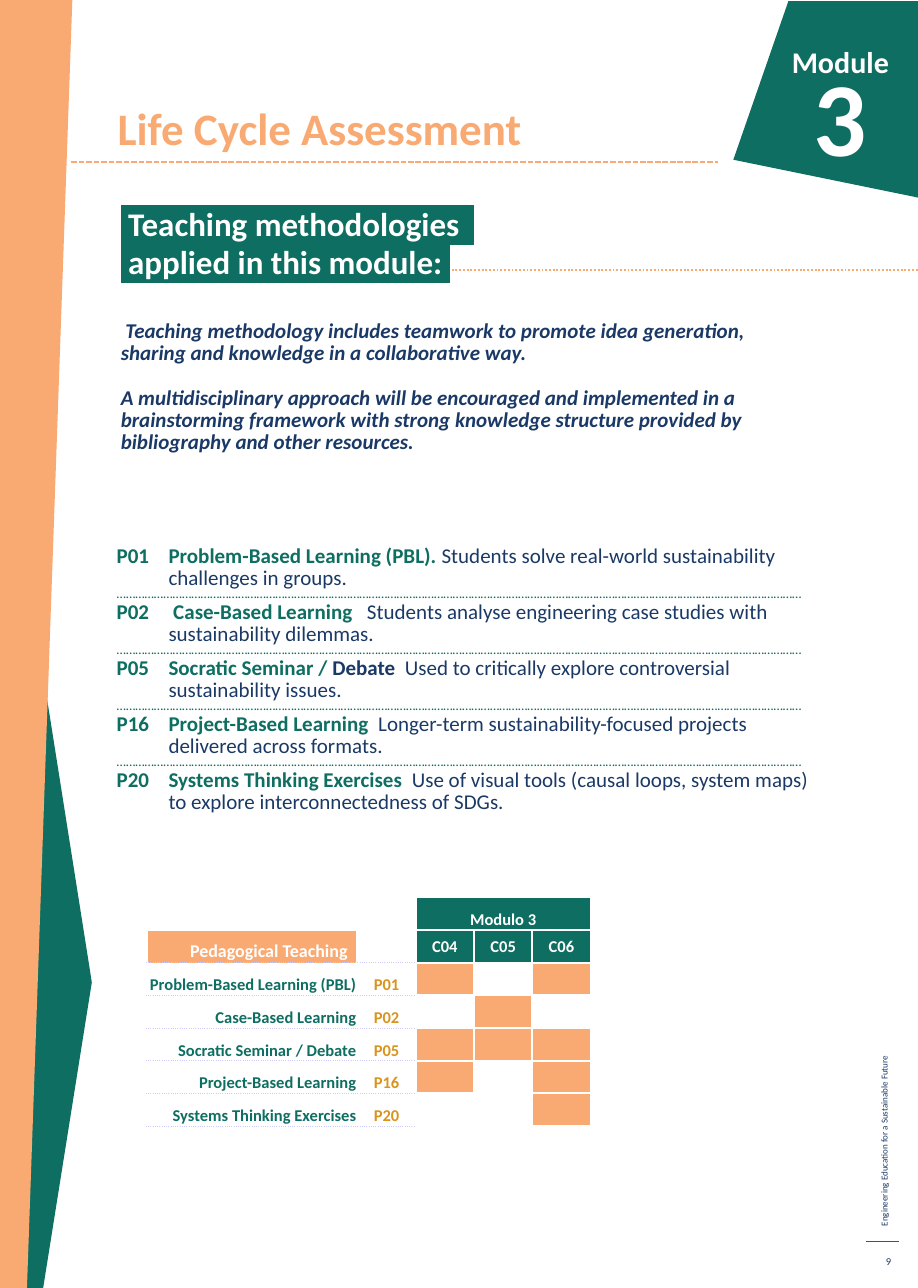
"""Build the Life Cycle Assessment teaching methodologies page."""
from dataclasses import dataclass
from typing import Optional

from lxml.etree import SubElement
from pptx import Presentation
from pptx.dml.color import RGBColor
from pptx.enum.dml import MSO_LINE
from pptx.enum.text import MSO_ANCHOR, MSO_AUTO_SIZE, PP_ALIGN
from pptx.oxml.ns import qn
from pptx.util import Inches, Pt

GREEN = RGBColor(0x0E, 0x6E, 0x61)
ORANGE = RGBColor(0xF9, 0xAA, 0x73)
NAVY = RGBColor(0x1A, 0x39, 0x66)
GOLD = RGBColor(0xD9, 0x94, 0x1E)
LILAC = RGBColor(0xCC, 0xCC, 0xFF)
WHITE = RGBColor(0xFF, 0xFF, 0xFF)
FONT = "Calibri"
DOTS = "……………………………………………………………………………………………………………………….…………………………………………………………………………"
DOTS_WIDTH = 456
DOTS_SIZE = 9


@dataclass(frozen=True)
class Span:
    text: str
    size: float
    color: RGBColor
    bold: bool = False
    italic: bool = False
    highlight: Optional[RGBColor] = None
    spacing: float = 0


@dataclass(frozen=True)
class Box:
    left: float
    top: float
    width: float
    height: float


@dataclass(frozen=True)
class Method:
    code: str
    lead: str
    detail: str
    label: str
    marks: str
    navy_lead: str = ""


@dataclass(frozen=True)
class Rule:
    x1: float
    x2: float
    y: float
    color: RGBColor
    width: float
    dash: Optional[MSO_LINE] = None


METHODS = [
    Method("P01\t", "Problem-Based Learning (PBL). ",
           "Students solve real-world sustainability challenges in groups.",
           "Problem-Based Learning (PBL)", "X.X"),
    Method("P02\t", " Case-Based Learning   ",
           "Students analyse engineering case studies with sustainability dilemmas.",
           "Case-Based Learning", ".X."),
    Method("P05 \t", "Socratic Seminar / ",
           "Used to critically explore controversial sustainability issues.",
           "Socratic Seminar / Debate", "XXX", "Debate  "),
    Method("P16 \t", "Project-Based Learning  ",
           "Longer-term sustainability-focused projects delivered across formats.",
           "Project-Based Learning", "X.X"),
    Method("P20\t", "Systems Thinking Exercises  ",
           "Use of visual tools (causal loops, system maps) to explore interconnectedness of SDGs.",
           "Systems Thinking Exercises", "..X"),
]
RULES = [
    Rule(8.02, 8.32, 11.5, GREEN, 0.75),
    Rule(2.52, 8.5, 2.5, ORANGE, 1.25, MSO_LINE.ROUND_DOT),
    Rule(0.66, 6.65, 1.5, ORANGE, 1.25, MSO_LINE.SQUARE_DOT),
]
OUTLINES = [
    (GREEN, [(0.4, 11.93), (0.23, 11.93), (0.23, 5.17), (0.83, 8.97), (0.85, 9.1)]),
    (ORANGE, [(0, 0), (0.67, 0), (0.25, 11.93), (0, 11.93)]),
    (GREEN, [(8.5, 0.01), (7.3, 0.01), (6.79, 1.48), (8.5, 1.83)]),
]


def add_span(p, span: Span) -> None:
    r = p.add_run()
    r.text = span.text
    f = r.font
    f.name, f.size, f.bold, f.italic = FONT, Pt(span.size), span.bold, span.italic
    f.color.rgb = span.color
    rPr = r._r.get_or_add_rPr()
    if span.spacing:
        rPr.set("spc", str(round(span.spacing * 100)))
    if span.highlight is not None:
        mark = SubElement(rPr, qn("a:highlight"))
        SubElement(mark, qn("a:srgbClr")).set("val", str(span.highlight))
        rPr.find(qn("a:solidFill")).addnext(mark)


def fill_text(tf, lines: list[list[Span]], align=PP_ALIGN.LEFT, leading=None, gap=0) -> None:
    for i, spans in enumerate(lines):
        p = tf.paragraphs[0] if i == 0 else tf.add_paragraph()
        p.alignment, p.space_before, p.space_after = align, Pt(0), Pt(gap)
        if leading:
            p.line_spacing = Pt(leading)
        for span in spans:
            add_span(p, span)


def place(sp, box: Box, anchor=MSO_ANCHOR.TOP):
    sp.left, sp.top = Inches(box.left), Inches(box.top)
    sp.width, sp.height = Inches(box.width), Inches(box.height)
    tf = sp.text_frame
    tf.word_wrap, tf.auto_size, tf.vertical_anchor = True, MSO_AUTO_SIZE.NONE, anchor
    return tf


def add_text(s, box: Box, lines: list[list[Span]], rotation=0, anchor=MSO_ANCHOR.TOP, **layout) -> None:
    sp = s.shapes.add_textbox(0, 0, 0, 0)
    fill_text(place(sp, box, anchor), lines, **layout)
    sp.rotation = rotation


def add_outline(s, color: RGBColor, points: list[tuple[float, float]]) -> None:
    pts = [(Inches(x), Inches(y)) for x, y in points]
    builder = s.shapes.build_freeform(*pts[0])
    builder.add_line_segments(pts[1:], close=True)
    sp = builder.convert_to_shape()
    sp.shadow.inherit = False
    sp.fill.solid()
    sp.fill.fore_color.rgb = color
    sp.line.fill.background()


def add_rule(s, rule: Rule) -> None:
    y = Inches(rule.y)
    c = s.shapes.add_connector(1, Inches(rule.x1), y, Inches(rule.x2), y)
    c.line.color.rgb, c.line.width = rule.color, Pt(rule.width)
    if rule.dash:
        c.line.dash_style = rule.dash
    SubElement(c._element.spPr, qn("a:effectLst"))


def fill_list(tf) -> None:
    natural = DOTS_SIZE * (0.69 * DOTS.count("…") + 0.25)
    dots = Span(DOTS, DOTS_SIZE, GREEN, spacing=(DOTS_WIDTH - natural) / len(DOTS))
    lines = []
    for m in METHODS:
        if lines:
            lines.append([dots])
        lead = [Span(m.code + m.lead, 14, GREEN, True)]
        if m.navy_lead:
            lead.append(Span(m.navy_lead, 14, NAVY, True))
        lines.append(lead + [Span(m.detail, 14, NAVY)])
    fill_text(tf, lines)
    for i, p in enumerate(tf.paragraphs):
        p.line_spacing = Pt(7.8 if i % 2 else 14.8)
        pPr = p._p.get_or_add_pPr()
        pPr.set("marL", str(Inches(0.49)))
        pPr.set("indent", str(-Inches(0.48)))
        SubElement(pPr, qn("a:buNone"))


def format_cell(cell, span: Optional[Span], fill: Optional[RGBColor], align, anchor, dotted: str) -> None:
    cell.margin_left = cell.margin_right = cell.margin_top = Inches(0.01)
    cell.margin_bottom = 0
    cell.vertical_anchor = anchor
    if span:
        fill_text(cell.text_frame, [[span]], align)
    else:
        SubElement(cell.text_frame.paragraphs[0]._p, qn("a:endParaRPr")).set("sz", "1100")
    tcPr = cell._tc.get_or_add_tcPr()
    for side in "LRTB":
        dots = side in dotted
        ln = SubElement(tcPr, qn(f"a:ln{side}"))
        ln.set("w", str(Pt(0.5 if dots else 1.5)))
        color = SubElement(SubElement(ln, qn("a:solidFill")), qn("a:srgbClr"))
        color.set("val", str(LILAC if dots else WHITE))
        SubElement(ln, qn("a:prstDash")).set("val", "sysDot" if dots else "solid")
    if fill is None:
        cell.fill.background()
    else:
        cell.fill.solid()
        cell.fill.fore_color.rgb = fill


def add_matrix(s) -> None:
    def bold(text: str, color: RGBColor = WHITE, size: float = 11) -> Span:
        return Span(text, size, color, True)

    rows = [[(None, None), (None, None), (bold("Modulo 3"), GREEN), (None, GREEN), (None, GREEN)],
            [(bold("Pedagogical Teaching", size=12), ORANGE), (None, None)]
            + [(bold(c), GREEN) for c in ("C04", "C05", "C06")]]
    for m in METHODS:
        rows.append([(bold(m.label, GREEN), None), (bold(m.code.strip(), GOLD), None)]
                    + [(None, ORANGE if mark == "X" else None) for mark in m.marks])
    t = s.shapes.add_table(len(rows), 5, Inches(1.36), Inches(8.31), Inches(4.11), Inches(2.12)).table
    t.first_row = t.horz_banding = False
    for i, col in enumerate(t.columns):
        col.width = Inches(0.54 if i else 1.95)
    for i, row in enumerate(rows):
        for j, (span, fill) in enumerate(row):
            dotted = "" if j > 1 or i == 0 else "B" if i == 1 else "TB"
            anchor = MSO_ANCHOR.MIDDLE if i == 1 and j > 1 else MSO_ANCHOR.BOTTOM
            format_cell(t.cell(i, j), span, fill, PP_ALIGN.CENTER if j else PP_ALIGN.RIGHT, anchor, dotted)
    t.cell(1, 0).margin_right = Inches(0.09)
    t.cell(0, 2).merge(t.cell(0, 4))


def main() -> None:
    prs = Presentation()
    prs.slide_width, prs.slide_height = Inches(8.5), Inches(11.93)
    s = prs.slides.add_slide(prs.slide_layouts[1])
    title = place(s.shapes.title, Box(0.99, 0.38, 3.96, 1.1), MSO_ANCHOR.BOTTOM)
    fill_text(title, [[Span("Life Cycle Assessment", 30, ORANGE, True)]], leading=26.8)
    fill_list(place(s.placeholders[1], Box(0.97, 5, 6.73, 3.29)))
    for color, points in OUTLINES:
        add_outline(s, color, points)
    for rule in RULES:
        add_rule(s, rule)
    add_text(s, Box(5.94, 9.11, 4.49, 0.2),
             [[Span("Engineering Education for a Sustainable Future", 6, NAVY)]], rotation=270)
    add_text(s, Box(8.02, 11.54, 0.33, 0.29), [[Span("9", 7, NAVY)]],
             anchor=MSO_ANCHOR.MIDDLE, align=PP_ALIGN.RIGHT)
    add_matrix(s)
    quotes = [" Teaching methodology includes teamwork to promote idea generation, sharing and knowledge in a collaborative way.",
              "A multidisciplinary approach will be encouraged and implemented in a brainstorming framework with strong knowledge structure provided by bibliography and other resources."]
    add_text(s, Box(1.02, 2.92, 6.16, 1.4), [[Span(q, 14, NAVY, True, True)] for q in quotes],
             leading=14.8, gap=14.8)
    heading = [" Teaching methodologies  ", " applied in this module: "]
    add_text(s, Box(1.02, 1.85, 3.79, 0.8),
             [[Span(h, 22, WHITE, True, highlight=GREEN)] for h in heading], leading=25.4)
    add_text(s, Box(6.53, 0.35, 1.8, 0.5), [[Span("Module", 20, WHITE, True)]], align=PP_ALIGN.RIGHT)
    add_text(s, Box(6.32, 0.43, 1.8, 1.42), [[Span("3", 70, WHITE, True)]], align=PP_ALIGN.RIGHT)
    prs.save("out.pptx")


if __name__ == "__main__":
    main()
